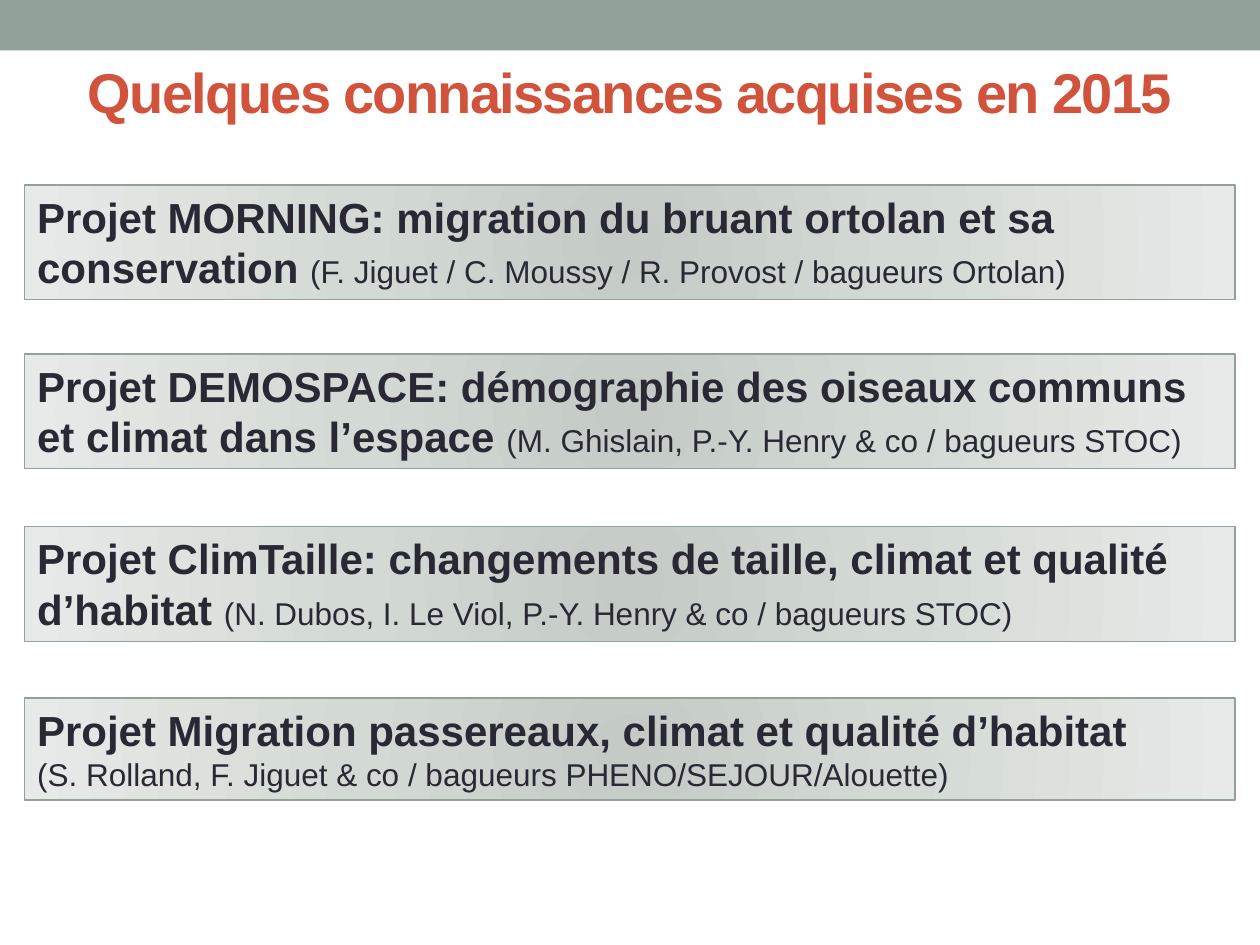
import dataclasses

import pptx
import pptx.dml.color
import pptx.enum.shapes
import pptx.enum.text
import pptx.oxml
import pptx.oxml.ns
import pptx.util
from pptx.util import Cm, Pt

FONT = "Arial"
COLOURS = {
    "band": "93A299",
    "title": "D2533C",
    "text": "292934",
}
GRADIENT_STOPS = {0: "C4CAC6", 45: "D3DAD6", 100: "E7EAE8"}
CARD_LEFT, CARD_WIDTH = Cm(0.5), Cm(24.4)


@dataclasses.dataclass(frozen=True)
class ProjectCard:
    top: float
    height: float
    project: str
    team: str
    team_below: bool = False


CARDS = [
    ProjectCard(3.73, 2.31,
                "Projet MORNING: migration du bruant ortolan et sa conservation ",
                "(F. Jiguet / C. Moussy / R. Provost / bagueurs Ortolan)"),
    ProjectCard(7.14, 2.31,
                "Projet DEMOSPACE: démographie des oiseaux communs et climat dans l’espace ",
                "(M. Ghislain, P.-Y. Henry & co / bagueurs STOC)"),
    ProjectCard(10.62, 2.31,
                "Projet ClimTaille: changements de taille, climat et qualité d’habitat ",
                "(N. Dubos, I. Le Viol, P.-Y. Henry & co / bagueurs STOC)"),
    ProjectCard(14.07, 2.06,
                "Projet Migration passereaux, climat et qualité d’habitat",
                "(S. Rolland, F. Jiguet & co / bagueurs PHENO/SEJOUR/Alouette)",
                team_below=True),
]


def colour(name: str) -> pptx.dml.color.RGBColor:
    return pptx.dml.color.RGBColor.from_string(COLOURS[name])


def add_run(paragraph, text: str, size: int, bold: bool, colour_name: str):
    run = paragraph.add_run()
    run.text = text
    run.font.name = FONT
    run.font.size = Pt(size)
    run.font.bold = bold
    run.font.color.rgb = colour(colour_name)
    return run


def add_rectangle(slide, left: int, top: int, width: int, height: int):
    shape = slide.shapes.add_shape(
        pptx.enum.shapes.MSO_SHAPE.RECTANGLE, left, top, width, height)
    shape.shadow.inherit = False
    return shape


def fill_with_radial_gradient(shape) -> None:
    shape.fill.gradient()
    properties = shape.element.spPr
    stops = "".join(
        f'<a:gs pos="{position * 1000}"><a:srgbClr val="{value}"/></a:gs>'
        for position, value in GRADIENT_STOPS.items())
    gradient = pptx.oxml.parse_xml(
        f'<a:gradFill {pptx.oxml.ns.nsdecls("a")} rotWithShape="1">'
        f'<a:gsLst>{stops}</a:gsLst><a:path path="circle">'
        '<a:fillToRect l="100000" t="100000" r="100000" b="100000"/>'
        '</a:path></a:gradFill>')
    properties.replace(
        properties.find(pptx.oxml.ns.qn("a:gradFill")), gradient)


def add_band(slide, width: int) -> None:
    band = add_rectangle(slide, 0, 0, width, Cm(1.02))
    band.fill.solid()
    band.fill.fore_color.rgb = colour("band")
    band.line.fill.background()


def format_title(slide, width: int) -> None:
    title = slide.shapes.title
    title.left, title.top, title.width, title.height = 0, Cm(0.76), width, Cm(2.16)
    frame = title.text_frame
    frame.auto_size = pptx.enum.text.MSO_AUTO_SIZE.NONE
    frame.vertical_anchor = pptx.enum.text.MSO_ANCHOR.MIDDLE
    paragraph = frame.paragraphs[0]
    paragraph.alignment = pptx.enum.text.PP_ALIGN.CENTER
    run = add_run(paragraph, "Quelques connaissances acquises en 2015", 32, True, "title")
    run.font._element.set("spc", "-100")
    slide.shapes.element.append(title.element)


def add_card(slide, card: ProjectCard) -> None:
    shape = add_rectangle(
        slide, CARD_LEFT, Cm(card.top), CARD_WIDTH, Cm(card.height))
    fill_with_radial_gradient(shape)
    shape.line.color.rgb = colour("band")
    shape.line.width = Pt(0.75)
    frame = shape.text_frame
    frame.word_wrap = True
    frame.auto_size = pptx.enum.text.MSO_AUTO_SIZE.SHAPE_TO_FIT_TEXT
    frame.vertical_anchor = pptx.enum.text.MSO_ANCHOR.TOP
    project_paragraph = frame.paragraphs[0]
    team_paragraph = frame.add_paragraph() if card.team_below else project_paragraph
    add_run(project_paragraph, card.project, 24, True, "text")
    add_run(team_paragraph, card.team, 18, False, "text")
    for paragraph in frame.paragraphs:
        paragraph.alignment = pptx.enum.text.PP_ALIGN.LEFT


def main() -> None:
    presentation = pptx.Presentation()
    presentation.slide_width = Cm(25.4)
    presentation.slide_height = Cm(19.05)
    slide = presentation.slides.add_slide(presentation.slide_layouts[5])
    add_band(slide, presentation.slide_width)
    format_title(slide, presentation.slide_width)
    for card in CARDS:
        add_card(slide, card)
    presentation.save("out.pptx")


if __name__ == "__main__":
    main()
